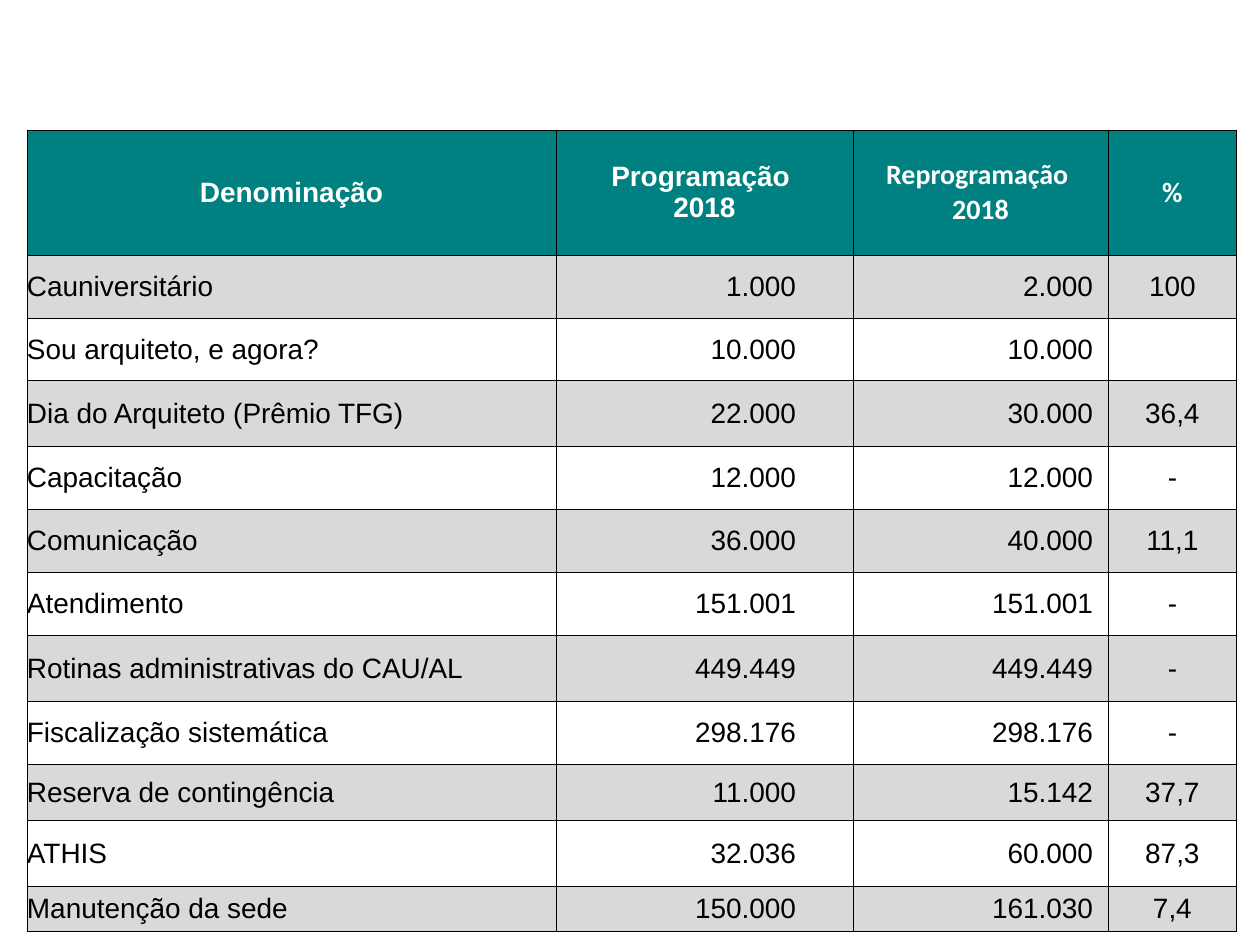
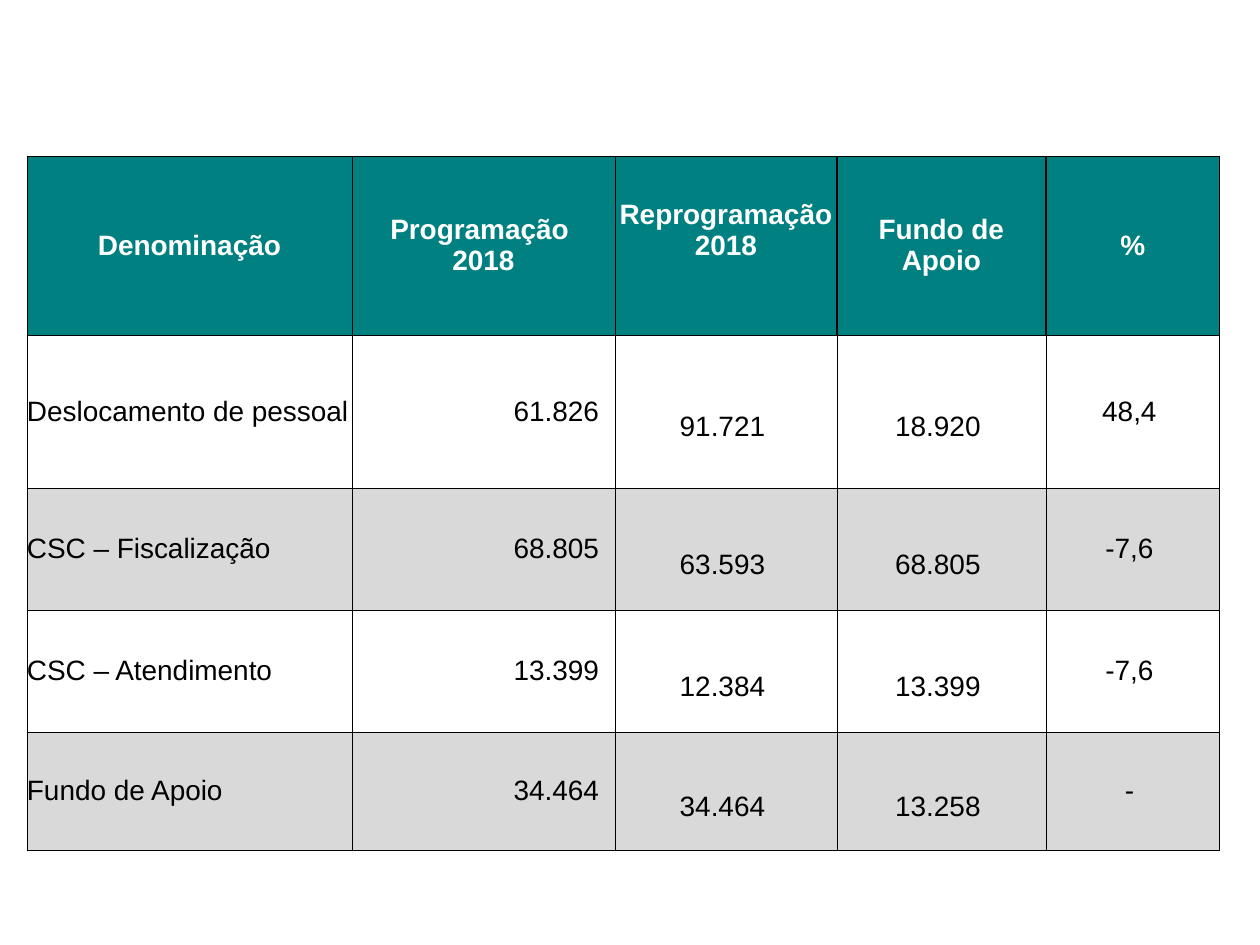
import pptx
import pptx.dml.color
import pptx.enum.text
import pptx.oxml
import pptx.oxml.ns
import pptx.util

PX = 914400 // 126
ALIGN = pptx.enum.text.PP_ALIGN
LEFT, CENTER, RIGHT = ALIGN.LEFT, ALIGN.CENTER, ALIGN.RIGHT


def px(n):
    return pptx.util.Emu(n * PX)


def rgb(value):
    return pptx.dml.color.RGBColor.from_string(value)


class Deck:
    TEAL, GRAY, WHITE, BLACK = "008080", "D9D9D9", "FFFFFF", "000000"
    FONT, SIZE = "Arial", 16

    def __init__(self):
        self.prs = pptx.Presentation()
        self.prs.slide_width = pptx.util.Inches(10)
        self.prs.slide_height = pptx.util.Inches(7.5)

    def slide(self):
        self.s = self.prs.slides.add_slide(self.prs.slide_layouts[6])
        self.s.background.fill.solid()
        self.s.background.fill.fore_color.rgb = rgb(self.WHITE)

    def border(self, cell, side, width):
        ns = pptx.oxml.ns.nsdecls("a")
        cell._tc.get_or_add_tcPr().append(pptx.oxml.parse_xml(
            f'<a:ln{side} {ns} w="{pptx.util.Pt(width)}"><a:solidFill>'
            f'<a:srgbClr val="{self.BLACK}"/></a:solidFill></a:ln{side}>'))

    def cell(self, cell, text, fill, color, align=CENTER, font=FONT,
             bold=False, top=0, right=0, bottom=0, edges=(0.5, 0.5)):
        for side, width in zip("LRTB", (*edges, 0.5, 0.5)):
            self.border(cell, side, width)
        cell.fill.solid()
        cell.fill.fore_color.rgb = rgb(fill)
        cell.vertical_anchor = pptx.enum.text.MSO_ANCHOR.MIDDLE
        cell.margin_left = 0
        cell.margin_top, cell.margin_right, cell.margin_bottom = px(top), px(right), px(bottom)
        cell.text_frame.text = text
        for p in cell.text_frame.paragraphs:
            p.alignment = align
            p.font.name = font
            p.font.size = pptx.util.Pt(self.SIZE)
            p.font.bold = bold
            p.font.color.rgb = rgb(color)

    def table(self, left, top, columns, heights, rows, first_gray, heavy=()):
        widths = [column["width"] for column in columns]
        table = self.s.shapes.add_table(
            len(heights), len(columns), px(left), px(top),
            px(sum(widths)), px(sum(heights))).table
        table.first_row = table.horz_banding = False
        for row, height in zip(table.rows, heights):
            row.height = px(height)
        for c, column in enumerate(columns):
            table.columns[c].width = px(column["width"])
            edges = [1 if edge in heavy else 0.5 for edge in (c, c + 1)]
            self.cell(table.cell(0, c), column["title"], self.TEAL, self.WHITE,
                      bold=True, edges=edges, **column.get("head", {}))
            for r, values in enumerate(rows, 1):
                fill = self.GRAY if r % 2 == first_gray % 2 else self.WHITE
                self.cell(table.cell(r, c), values[c], fill, self.BLACK,
                          **column.get("body", {}))


def programme_slide(deck):
    calibri = {"font": "Calibri"}
    columns = [
        {"title": "Denominação", "width": 529, "body": {"align": LEFT}},
        {"title": "Programação \v2018", "width": 297, "body": {"align": RIGHT, "right": 57}},
        {"title": "Reprogramação \n2018", "width": 255, "head": calibri,
         "body": {"align": RIGHT, "right": 15}},
        {"title": "%", "width": 129, "head": calibri},
    ]
    rows = [
        ("Cauniversitário", "1.000", "2.000", "100"),
        ("Sou arquiteto, e agora?", "10.000", "10.000", ""),
        ("Dia do Arquiteto (Prêmio TFG)", "22.000", "30.000", "36,4"),
        ("Capacitação", "12.000", "12.000", "-"),
        ("Comunicação", "36.000", "40.000", "11,1"),
        ("Atendimento", "151.001", "151.001", "-"),
        ("Rotinas administrativas do CAU/AL", "449.449", "449.449", "-"),
        ("Fiscalização sistemática", "298.176", "298.176", "-"),
        ("Reserva de contingência", "11.000", "15.142", "37,7"),
        ("ATHIS", "32.036", "60.000", "87,3"),
        ("Manutenção da sede", "150.000", "161.030", "7,4"),
    ]
    heights = [125, 63, 63, 66, 63, 63, 63, 66, 63, 56, 66, 45]
    deck.slide()
    deck.table(27, 130, columns, heights, rows, first_gray=1)


def support_fund_slide(deck):
    lowered = {"top": 31, "right": 7}
    columns = [
        {"title": "Denominação", "width": 325, "body": {"align": LEFT}},
        {"title": "Programação \v2018", "width": 263, "body": {"align": RIGHT, "right": 16}},
        {"title": "Reprogramação 2018", "width": 222, "head": {"bottom": 31}, "body": lowered},
        {"title": "Fundo de\vApoio", "width": 209, "body": lowered},
        {"title": "%", "width": 174, "body": {"right": 7}},
    ]
    rows = [
        ("Deslocamento de pessoal", "61.826", "91.721", "18.920", "48,4"),
        ("CSC – Fiscalização", "68.805", "63.593", "68.805", "-7,6"),
        ("CSC – Atendimento", "13.399", "12.384", "13.399", "-7,6"),
        ("Fundo de Apoio", "34.464", "34.464", "13.258", "-"),
    ]
    deck.slide()
    deck.table(27, 156, columns, [179, 153, 122, 122, 118], rows, first_gray=2, heavy=(3, 4))


def main():
    deck = Deck()
    programme_slide(deck)
    support_fund_slide(deck)
    deck.prs.save("out.pptx")


if __name__ == "__main__":
    main()
